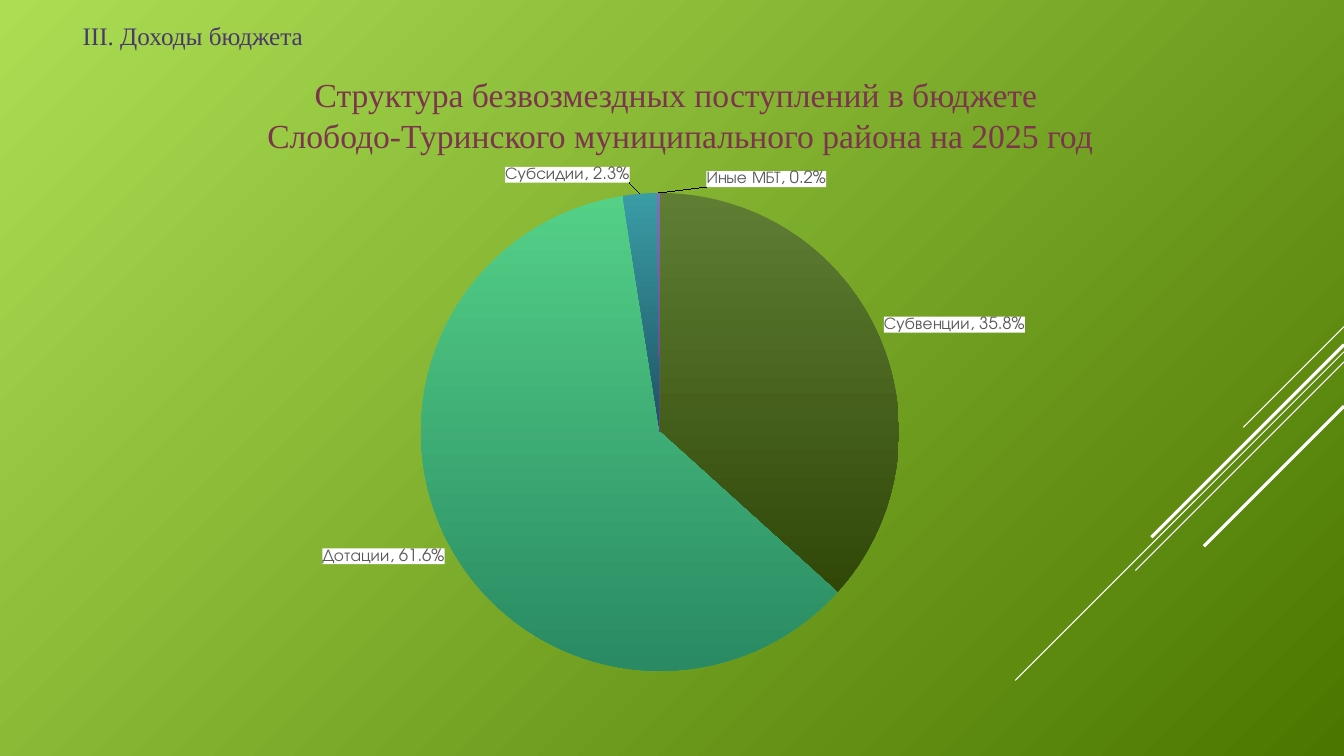
from lxml import etree
from pptx import Presentation
from pptx.chart.data import CategoryChartData
from pptx.dml.color import RGBColor
from pptx.enum.chart import XL_CHART_TYPE, XL_LABEL_POSITION
from pptx.enum.shapes import MSO_CONNECTOR
from pptx.enum.text import MSO_ANCHOR, MSO_AUTO_SIZE, PP_ALIGN
from pptx.oxml import parse_xml
from pptx.oxml.ns import nsdecls, qn
from pptx.util import Inches, Pt

WHITE = RGBColor(0xFF, 0xFF, 0xFF)
LIME = RGBColor(0xAC, 0xDE, 0x54)
DARK_GREEN = RGBColor(0x4B, 0x77, 0x00)
PURPLE = RGBColor(0x4C, 0x37, 0x6B)
MAROON = RGBColor(0x7C, 0x35, 0x4D)
GREY = RGBColor(0x59, 0x59, 0x59)
SERIF = "Times New Roman"
SANS = "TeX Gyre Adventor"


def fill_gradient(fill, start, end, angle):
    """Two-stop linear gradient; the angle runs counter-clockwise."""
    fill.gradient()
    fill.gradient_angle = angle
    for stop, color in zip(fill.gradient_stops, (start, end)):
        stop.color.rgb = color


def manual_layout(**settings):
    items = "".join(f'<c:{key} val="{value}"/>' for key, value in settings.items())
    return parse_xml(f'<c:layout {nsdecls("c")}><c:manualLayout>{items}'
                     '</c:manualLayout></c:layout>')


prs = Presentation()
prs.slide_width, prs.slide_height = Inches(13.33), Inches(7.5)
slide = prs.slides.add_slide(prs.slide_layouts[5])
fill_gradient(slide.background.fill, LIME, DARK_GREEN, 315)

# Diagonal rays: start height on the right edge, horizontal run, width
for top, run, width in [(3.24, 1, 0.75), (3.49, 3.26, 0.75), (3.59, 2.07, 0.75),
                        (3.42, 1.91, 2.25), (4.03, 1.39, 2.25)]:
    ray = slide.shapes.add_connector(
        MSO_CONNECTOR.STRAIGHT, Inches(13.33), Inches(top),
        Inches(13.33 - run), Inches(top + run))
    ray.line.color.rgb = WHITE
    ray.line.width = Pt(width)
    etree.SubElement(ray.element.spPr, qn("a:effectLst"))

# Pie of transfers: name, value, gradient, own label text, label shift
transfers = [
    ("Субвенции", 36.7, "5F7E34", "304708", "Субвенции, 35.8%", None),
    ("Дотации", 60.8, "54D087", "298A63", "Дотации, 61.6%", None),
    ("Субсидии", 2.3, "3A9DA6", "1E5262", None, (-0.06, -0.01)),
    ("Иные МБТ", 0.2, "7E71B9", "5C417B", None, (0.09, 0)),
]
data = CategoryChartData()
data.categories = [transfer[0] for transfer in transfers]
data.add_series("Series 1", [transfer[1] for transfer in transfers])
chart = slide.shapes.add_chart(
    XL_CHART_TYPE.PIE, Inches(0.72), Inches(1.55), Inches(11.89), Inches(5.21), data).chart
chart.has_title = chart.has_legend = False
chart.font.name, chart.font.size = SANS, Pt(10)
pie = chart.plots[0]
pie.vary_by_categories = True
plot_area = chart.element.find(".//" + qn("c:plotArea"))
for default_layout in plot_area.findall(qn("c:layout")):
    plot_area.remove(default_layout)
plot_area.insert(0, manual_layout(layoutTarget="inner", xMode="edge", yMode="edge",
                                  x=0.29, y=0.07, w=0.4, h=0.91))

series = pie.series[0]
labels = series.data_labels
labels.show_value = False
labels.show_category_name = labels.show_percentage = True
labels.position = XL_LABEL_POSITION.OUTSIDE_END
labels.font.name, labels.font.size = SANS, Pt(12)
labels.font.color.rgb = GREY

for index, (name, value, start, end, text, shift) in enumerate(transfers):
    point = series.points[index]
    fill_gradient(point.format.fill, RGBColor.from_string(start),
                  RGBColor.from_string(end), 270)
    label = point.data_label
    if text:
        label.text_frame.text = text
        font = label.text_frame.paragraphs[0].font
    else:
        font = label.font
    font.name, font.size = SANS, Pt(12)
    font.color.rgb = GREY
    label.position = XL_LABEL_POSITION.OUTSIDE_END

for label_xml in labels._element.findall(qn("c:dLbl")):
    shift = transfers[int(label_xml.find(qn("c:idx")).get("val"))][5]
    if shift:
        label_xml.insert(1, manual_layout(x=shift[0], y=shift[1]))
    for flag, shown in [("showVal", 0), ("showCatName", 1), ("showPercent", 1)]:
        label_xml.find(qn("c:" + flag)).set("val", str(shown))
    following = label_xml.find(qn("c:txPr"))
    if following is None:
        following = label_xml.find(qn("c:dLblPos"))
    following.addprevious(parse_xml(
        f'<c:numFmt {nsdecls("c")} formatCode="0.0%" sourceLinked="0"/>'))
    following.addprevious(parse_xml(
        f'<c:spPr {nsdecls("c", "a")}><a:solidFill><a:srgbClr val="{WHITE}"/>'
        '</a:solidFill></c:spPr>'))
    label_xml.find(qn("c:showBubbleSize")).addnext(parse_xml(
        f'<c:separator {nsdecls("c")}>, </c:separator>'))
labels.number_format, labels.number_format_is_linked = "0.0%", False

section = slide.shapes.add_textbox(Inches(0.72), Inches(0.19), Inches(11.89), Inches(0.32))
section.text_frame.word_wrap = True
section.text_frame.vertical_anchor = MSO_ANCHOR.MIDDLE
section.text_frame.text = "III. Доходы бюджета"
section_font = section.text_frame.paragraphs[0].font
section_font.name, section_font.size = SERIF, Pt(18)
section_font.color.rgb = PURPLE

title = slide.shapes.title
title.left, title.top = Inches(0.76), Inches(0.68)
title.width, title.height = Inches(11.89), Inches(0.9)
title.text_frame.auto_size = MSO_AUTO_SIZE.NONE
title.text_frame.vertical_anchor = MSO_ANCHOR.TOP
title.text_frame.text = ("Структура безвозмездных поступлений в бюджете\v"
                         " Слободо-Туринского муниципального района на 2025 год")
heading = title.text_frame.paragraphs[0]
heading.alignment = PP_ALIGN.CENTER
heading.line_spacing = Pt(29)
heading.font.name, heading.font.size = SERIF, Pt(24)
heading.font.color.rgb = MAROON

prs.save("out.pptx")
